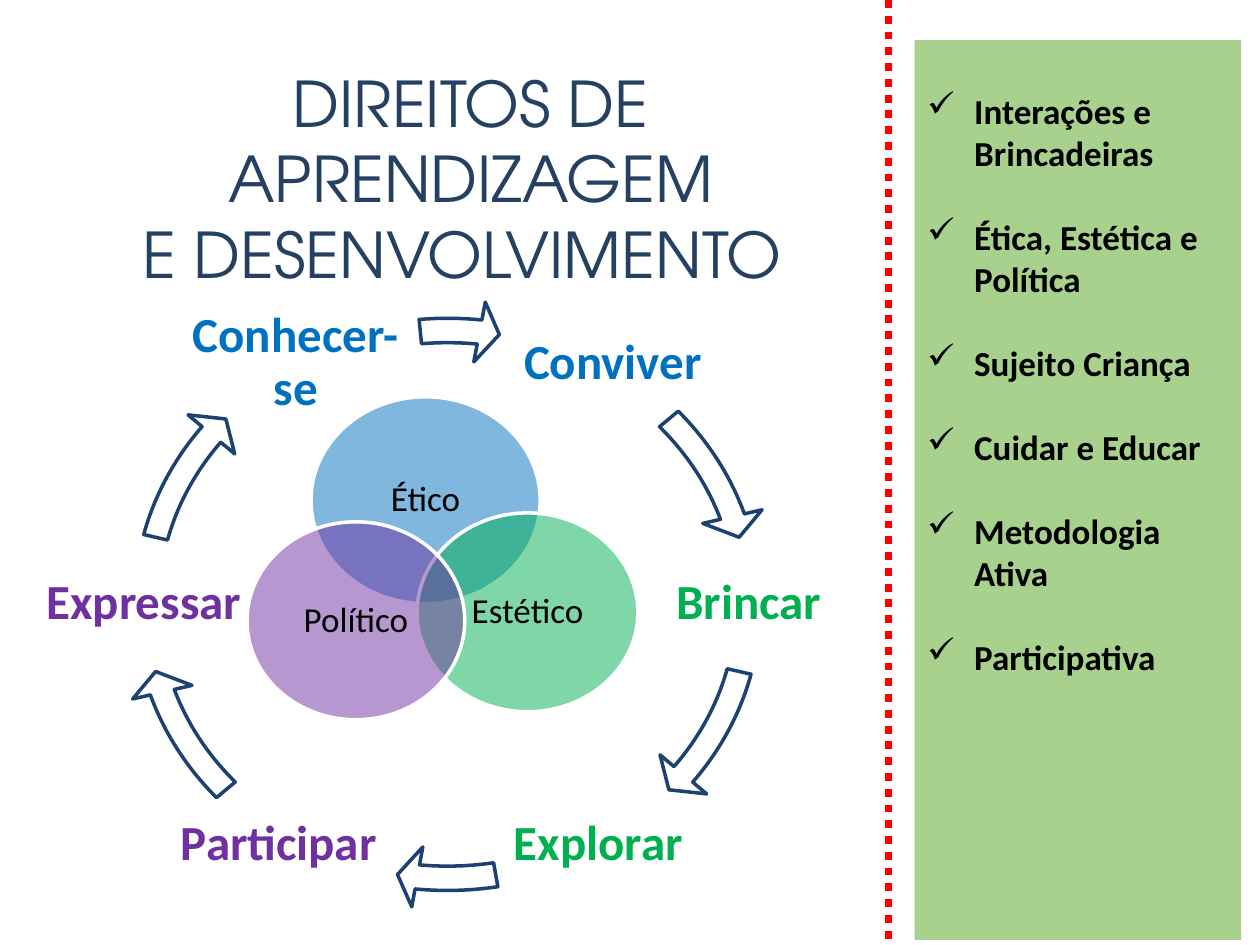
from dataclasses import dataclass

from lxml import etree
from pptx import Presentation
from pptx import util as u
from pptx.dml.color import RGBColor
from pptx.enum import dml, shapes, text
from pptx.oxml import ns
from pptx.util import Cm


@dataclass(frozen=True)
class Theme:
    blue: str = "0070C0"
    green: str = "00B050"
    purple: str = "7030A0"
    navy: str = "254061"
    arrow: str = "1C4271"
    red: str = "FF0000"
    panel: str = "A9D18E"
    white: str = "FFFFFF"
    black: str = "000000"
    body_font: str = "Calibri"
    title_font: str = "TeX Gyre Adventor"
    title_size: int = 36
    right_size: int = 28
    body_size: int = 20


theme = Theme()


def style(paragraph, color, size, bold=False, font=theme.body_font):
    for run in paragraph.runs:
        run.font.name = font
        run.font.size = u.Pt(size)
        run.font.bold = bold
        run.font.color.rgb = RGBColor.from_string(color)


def add_label(group, box, wording, color, size, inset, bold=False):
    """Add a centred text box to a diagram group."""
    frame = group.shapes.add_textbox(*map(Cm, box)).text_frame
    frame.word_wrap = True
    frame.vertical_anchor = text.MSO_ANCHOR.MIDDLE
    frame.margin_left = frame.margin_right = Cm(inset)
    frame.margin_top = frame.margin_bottom = Cm(inset)
    frame.text = wording
    frame.paragraphs[0].alignment = text.PP_ALIGN.CENTER
    frame.paragraphs[0].line_spacing = 0.9
    style(frame.paragraphs[0], color, size, bold)


presentation = Presentation()
presentation.slide_width, presentation.slide_height = Cm(25.4), Cm(19.05)
slide = presentation.slides.add_slide(presentation.slide_layouts[6])

# Dotted divider
divider = slide.shapes.add_connector(
    shapes.MSO_CONNECTOR.STRAIGHT, Cm(17.91), 0, Cm(17.91), Cm(19.05))
divider.line.color.rgb = RGBColor.from_string(theme.red)
divider.line.width = u.Pt(4.5)
divider.line.dash_style = dml.MSO_LINE.ROUND_DOT
etree.SubElement(divider._element.spPr, ns.qn("a:effectLst"))

# Cycle of rights: wording, left, top, width, colour, end and start of the next arrow
rights = [
    ("Conviver", 10.16, 6.07, 4.39, theme.blue, 205.73, 192.04),
    ("Brincar", 13.46, 10.92, 3.28, theme.green, 21.46, 7.77),
    ("Explorar", 10.08, 15.77, 3.96, theme.green, 57.78, 47.92),
    ("Participar", 2.79, 15.77, 5.66, theme.purple, 97.73, 84.04),
    ("Expressar", 0.74, 10.92, 4.32, theme.purple, 129.46, 115.77),
    ("Conhecer-se", 3.51, 6.07, 4.9, theme.blue, 166.04, 158.6),
]
cycle = slide.shapes.add_group_shape()
for wording, left, top, width, color, arrow_end, arrow_start in rights:
    add_label(cycle, (left, top, width, 2.51), wording, color,
              theme.right_size, 0.05, bold=True)
    arrow = cycle.shapes.add_shape(
        shapes.MSO_SHAPE.CIRCULAR_ARROW, Cm(2.34), Cm(6.05), Cm(13.36), Cm(12.27))
    for index, value in enumerate((0.04, 2.5, arrow_end, arrow_start, 0.05)):
        arrow.adjustments[index] = value
    arrow.shadow.inherit = False
    arrow.fill.solid()
    arrow.fill.fore_color.rgb = RGBColor.from_string(theme.white)
    arrow.line.color.rgb = RGBColor.from_string(theme.arrow)
    arrow.line.width = u.Pt(2)

# Overlapping principles
principles = [
    ("Ético", 6.27, 8, 4.62, 4.17, theme.blue),
    ("Estético", 8.41, 10.34, 4.45, 4.01, theme.green),
    ("Político", 4.98, 10.52, 4.39, 3.99, theme.purple),
]
inscribed = 0.71  # side of the text box relative to its ellipse
venn = slide.shapes.add_group_shape()
for wording, left, top, width, height, color in principles:
    ellipse = venn.shapes.add_shape(
        shapes.MSO_SHAPE.OVAL, Cm(left), Cm(top), Cm(width), Cm(height))
    ellipse.shadow.inherit = False
    ellipse.fill.solid()
    ellipse.fill.fore_color.rgb = RGBColor.from_string(color)
    fill_color = ellipse._element.spPr.find(ns.qn("a:solidFill"))[0]
    etree.SubElement(fill_color, ns.qn("a:alpha"), val="50000")
    ellipse.line.color.rgb = RGBColor.from_string(theme.white)
    ellipse.line.width = u.Pt(2)
    margin = (1 - inscribed) / 2
    box = (left + width * margin, top + height * margin,
           width * inscribed, height * inscribed)
    add_label(venn, box, wording, theme.black, theme.body_size, 0.13)

# Title
title = slide.shapes.add_textbox(Cm(0.74), Cm(1.17), Cm(17.5), Cm(4.88)).text_frame
title.word_wrap = True
title.text = "DIREITOS DE APRENDIZAGEM\nE DESENVOLVIMENTO "
for paragraph in title.paragraphs:
    paragraph.alignment = text.PP_ALIGN.CENTER
    style(paragraph, theme.navy, theme.title_size, font=theme.title_font)

# Checklist panel
panel = slide.shapes.add_shape(
    shapes.MSO_SHAPE.RECTANGLE, Cm(18.44), Cm(0.81), Cm(6.58), Cm(18.14))
panel.shadow.inherit = False
panel.fill.solid()
panel.fill.fore_color.rgb = RGBColor.from_string(theme.panel)
panel.line.fill.background()
checklist = panel.text_frame
checklist.word_wrap = True
checklist.vertical_anchor = text.MSO_ANCHOR.TOP
checklist.margin_top = Cm(0.99)
checklist.text = "\n".join([
    "Interações e Brincadeiras",
    "Ética, Estética e Política",
    "Sujeito Criança",
    "Cuidar e Educar",
    "Metodologia Ativa",
    "Participativa",
])
for index, paragraph in enumerate(checklist.paragraphs):
    paragraph.alignment = text.PP_ALIGN.LEFT
    paragraph.space_before = u.Pt(24 if index else 0)
    style(paragraph, theme.black, theme.body_size, bold=True)
    properties = paragraph._p.get_or_add_pPr()
    properties.set("marL", str(Cm(0.95)))
    properties.set("indent", str(-Cm(0.95)))
    etree.SubElement(properties, ns.qn("a:buChar"), char="✓")

presentation.save("out.pptx")
